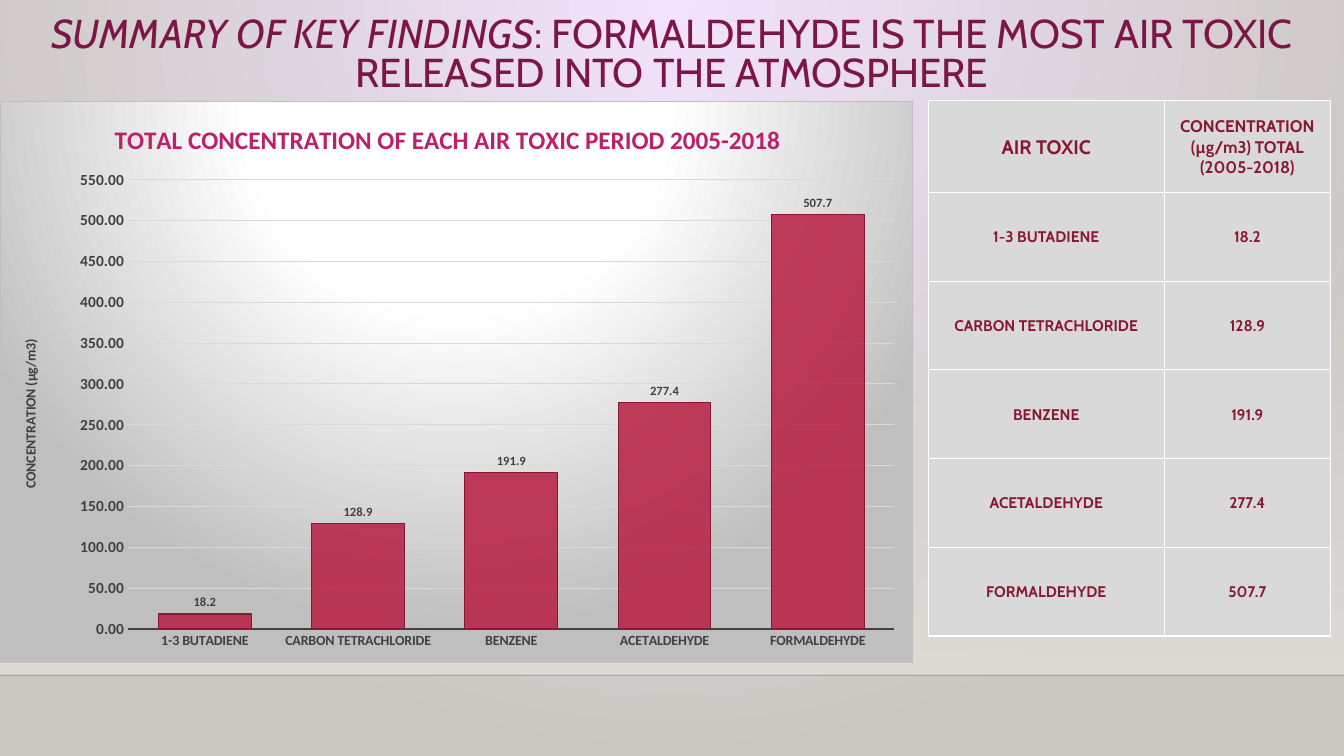
from dataclasses import dataclass
from pptx import Presentation
from pptx.chart.data import CategoryChartData
from pptx.dml.color import RGBColor
from pptx.enum.chart import XL_CHART_TYPE, XL_LABEL_POSITION, XL_TICK_MARK
from pptx.enum.shapes import MSO_CONNECTOR, MSO_SHAPE
from pptx.enum.text import MSO_ANCHOR, MSO_AUTO_SIZE, PP_ALIGN
from pptx.oxml import parse_xml
from pptx.oxml.ns import nsdecls, qn
from pptx.util import Inches, Pt


@dataclass(frozen=True)
class Theme:
    heading: str = "7C1646"
    caption: str = "BA2169"
    bar: str = "B71E42"
    wine: str = "891731"
    ink: str = "404040"
    grid: str = "D9D9D9"
    edge: str = "BFBFBF"
    white: str = "FFFFFF"
    floor: str = "DFDBD5"
    glow: str = "F2E3FC"
    stone: str = "CAC7C1"
    rule: str = "000001"
    body_font: str = "Cabin"
    chart_font: str = "Calibri"
    heading_size: float = 28.8
    caption_size: int = 18
    header_size: int = 14
    unit_size: int = 12
    cell_size: int = 11
    axis_size: int = 10
    label_size: int = 9


theme = Theme()
WIDTH, HEIGHT = Inches(13.33), Inches(7.5)


def area(left, top, width, height):
    return [int(share * side / 100) for share, side in
            zip((left, top, width, height), (WIDTH, HEIGHT) * 2)]


def gradient(stops, direction):
    stop_xml = "".join(
        f'<a:gs pos="{position * 1000}"><a:srgbClr val="{color}">'
        f'<a:alpha val="{alpha * 1000}"/></a:srgbClr></a:gs>'
        for position, color, alpha in stops)
    return parse_xml(f'<a:gradFill {nsdecls("a")} rotWithShape="1">'
                     f'<a:gsLst>{stop_xml}</a:gsLst>{direction}</a:gradFill>')


circle = ('<a:path path="circle"><a:fillToRect l="{}000" t="{}000" '
          'r="{}000" b="{}000"/></a:path>')

deck = Presentation()
deck.slide_width, deck.slide_height = WIDTH, HEIGHT
slide = deck.slides.add_slide(deck.slide_layouts[5])

slide.background.fill.solid()
backdrop = slide.element.find(".//" + qn("p:bgPr"))
backdrop.replace(backdrop.find(qn("a:solidFill")), gradient(
    [(0, theme.glow, 100), (100, theme.stone, 100)], circle.format(43, 0, 43, 100)))

wall = slide.shapes.add_shape(MSO_SHAPE.RECTANGLE, *area(0, 29.47, 100, 59.87))
wall.shadow.inherit = False
wall.line.fill.background()
wall.fill.solid()
wall_look = wall.element.spPr
wall_look.replace(wall_look.find(qn("a:solidFill")), gradient(
    [(0, theme.floor, 0), (100, theme.floor, 100)], '<a:lin ang="5400000" scaled="0"/>'))

left, skirting_y, right, _ = area(0, 89.33, 100, 0)
skirting = slide.shapes.add_connector(
    MSO_CONNECTOR.STRAIGHT, left, skirting_y, right, skirting_y)
skirting.line.width = Pt(1)
skirting.line.color.rgb = RGBColor.from_string(theme.rule)
skirting.element.spPr.append(parse_xml(f'<a:effectLst {nsdecls("a")}/>'))

heading = slide.shapes.title
heading.left, heading.top, heading.width, heading.height = area(0, 1.6, 100, 11.73)
heading.text_frame.auto_size = MSO_AUTO_SIZE.NONE
heading.text_frame.word_wrap = True
heading.text_frame.vertical_anchor = MSO_ANCHOR.MIDDLE
headline = heading.text_frame.paragraphs[0]
for words, italic in (
        ("SUMMARY OF KEY FINDINGS", True),
        (": FORMALDEHYDE IS THE MOST AIR TOXIC RELEASED INTO THE ATMOSPHERE", False)):
    part = headline.add_run()
    part.text = words
    part.font.italic = italic
headline.alignment = PP_ALIGN.CENTER
headline.line_spacing = 0.8
headline.font.name = theme.body_font
headline.font.size = Pt(theme.heading_size)
headline.font.color.rgb = RGBColor.from_string(theme.heading)

totals = {"1-3 BUTADIENE": 18.2, "CARBON TETRACHLORIDE": 128.9, "BENZENE": 191.9,
          "ACETALDEHYDE": 277.4, "FORMALDEHYDE": 507.7}
chart_data = CategoryChartData(number_format="0.0")
chart_data.categories = list(totals)
chart_data.add_series("Series 1", list(totals.values()))
chart = slide.shapes.add_chart(
    XL_CHART_TYPE.COLUMN_CLUSTERED, *area(0, 13.33, 67.95, 74.4), chart_data).chart
chart.has_legend = False
chart.font.name = theme.chart_font
chart.font.size = Pt(theme.axis_size)

panel = parse_xml(
    f'<c:spPr {nsdecls("c", "a")}><a:ln w="{Pt(0.75)}"><a:solidFill>'
    f'<a:srgbClr val="{theme.edge}"/></a:solidFill></a:ln></c:spPr>')
panel.insert(0, gradient(
    [(0, theme.white, 100), (39, theme.white, 100), (100, theme.edge, 100)],
    circle.format(50, -80, 50, 180)))
chart_root = chart.element if hasattr(chart, "element") else chart._chartSpace
chart_root.find(qn("c:chart")).addnext(panel)

plot = chart.plots[0]
plot.gap_width = 65
plot.vary_by_categories = False
bars = plot.series[0].format
bars.fill.solid()
bars.fill.fore_color.rgb = RGBColor.from_string(theme.bar)
bars.line.width = Pt(0.75)
bars.line.color.rgb = RGBColor.from_string(theme.wine)

plot.has_data_labels = True
labels = plot.data_labels
labels.show_value = True
labels.number_format = "0.0"
labels.number_format_is_linked = False
labels.position = XL_LABEL_POSITION.OUTSIDE_END

toxics, amounts = chart.category_axis, chart.value_axis
for axis in (toxics, amounts):
    axis.major_tick_mark = axis.minor_tick_mark = XL_TICK_MARK.NONE
toxics.format.line.width = Pt(1.5)
toxics.format.line.color.rgb = RGBColor.from_string(theme.ink)
amounts.format.line.fill.background()
amounts.minimum_scale, amounts.maximum_scale, amounts.major_unit = 0, 550, 50
amounts.tick_labels.number_format = "#,##0.00"
amounts.tick_labels.number_format_is_linked = False
amounts.major_gridlines.format.line.width = Pt(0.75)
amounts.major_gridlines.format.line.color.rgb = RGBColor.from_string(theme.grid)

caption = chart.chart_title.text_frame
caption.text = "TOTAL CONCENTRATION OF EACH AIR TOXIC PERIOD 2005-2018"
unit = amounts.axis_title.text_frame
unit.text = "CONCENTRATION (µg/m3)"
unit._txBody.bodyPr.set("rot", "-5400000")
unit._txBody.bodyPr.set("vert", "horz")

for font, size, color in (
        (caption.paragraphs[0].font, theme.caption_size, theme.caption),
        (unit.paragraphs[0].font, theme.axis_size, theme.ink),
        (toxics.tick_labels.font, theme.axis_size, theme.ink),
        (amounts.tick_labels.font, theme.cell_size, theme.ink),
        (labels.font, theme.label_size, theme.ink)):
    font.name = theme.chart_font
    font.size = Pt(size)
    font.bold = True
    font.color.rgb = RGBColor.from_string(color)

for owner, position, target, shares in (
        (chart.chart_title._element, 1, "", {"x": 0.12, "y": 0.03}),
        (amounts.axis_title._element, 1, "", {"x": 0.02, "y": 0.42}),
        (chart_root.find(".//" + qn("c:plotArea")), 0, '<c:layoutTarget val="inner"/>',
         {"x": 0.14, "y": 0.14, "w": 0.84, "h": 0.8})):
    for spare in owner.findall(qn("c:layout")):
        owner.remove(spare)
    modes = "".join(f'<c:{key}Mode val="edge"/>' for key in "xy")
    places = "".join(f'<c:{key} val="{share}"/>' for key, share in shares.items())
    owner.insert(position, parse_xml(
        f'<c:layout {nsdecls("c")}><c:manualLayout>{target}{modes}{places}'
        '</c:manualLayout></c:layout>'))

records = [("AIR TOXIC", "CONCENTRATION (µg/m3) TOTAL (2005-2018)"), *totals.items()]
table = slide.shapes.add_table(len(records), 2, *area(69.07, 13.33, 29.9, 70.93)).table
table.first_row = table.horz_banding = False
for column, width in zip(table.columns, (2.34, 1.65)):
    column.width = Inches(width)
for row_number, record in enumerate(records):
    table.rows[row_number].height = Inches(0.88 if row_number else 0.91)
    for column_number, entry in enumerate(record):
        cell = table.cell(row_number, column_number)
        cell.text = str(entry)
        cell.vertical_anchor = MSO_ANCHOR.MIDDLE
        cell.margin_left = cell.margin_right = cell.margin_top = Inches(0.01)
        cell.margin_bottom = 0
        cell.fill.solid()
        cell.fill.fore_color.rgb = RGBColor.from_string(theme.grid)
        for order, side in enumerate("LRTB"):
            cell._tc.tcPr.insert(order, parse_xml(
                f'<a:ln{side} {nsdecls("a")} w="{Pt(1)}"><a:solidFill>'
                f'<a:srgbClr val="{theme.white}"/></a:solidFill></a:ln{side}>'))
        line = cell.text_frame.paragraphs[0]
        line.alignment = PP_ALIGN.CENTER
        line.font.name = theme.body_font
        line.font.bold = True
        line.font.size = Pt(theme.cell_size if row_number else
                            (theme.header_size, theme.unit_size)[column_number])
        line.font.color.rgb = RGBColor.from_string(theme.wine)

for color, alpha in ((bars.fill._xPr.find(".//" + qn("a:srgbClr")), 85),
                     (skirting.element.spPr.find(".//" + qn("a:srgbClr")), 20)):
    color.append(parse_xml(f'<a:alpha {nsdecls("a")} val="{alpha * 1000}"/>'))

deck.save("out.pptx")
